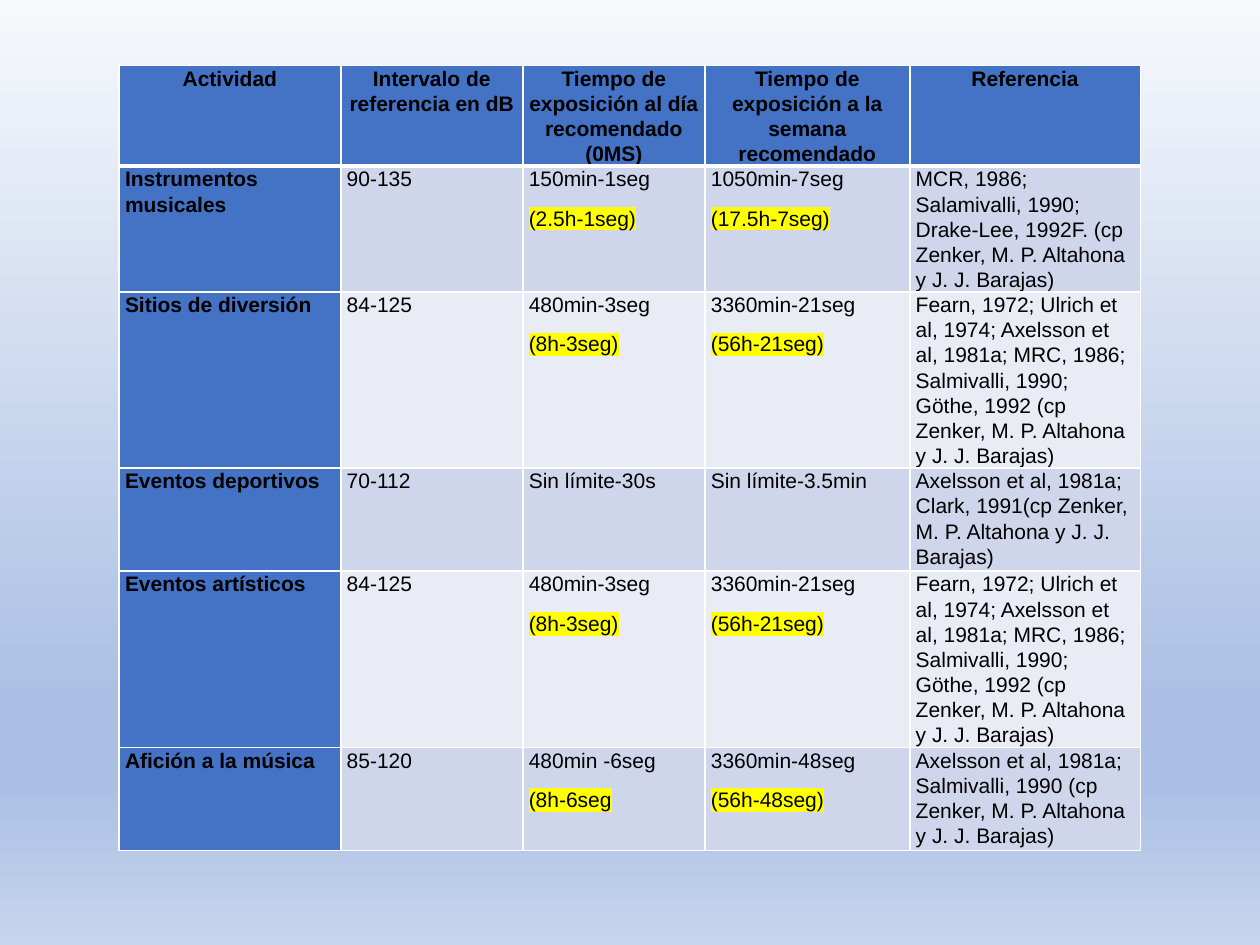
import pptx
import pptx.dml.color
import pptx.enum.text
import pptx.oxml
import pptx.oxml.ns
import pptx.util
from lxml import etree
from pptx.util import Cm, Pt

# Content: each cell is a list of paragraphs; those opening with "(" are highlighted
VENUE_SOURCES = (
    "Fearn, 1972; Ulrich et al, 1974; Axelsson et al, 1981a; MRC, 1986; "
    "Salmivalli, 1990; Göthe, 1992 (cp Zenker, M. P. Altahona y J. J. Barajas)"
)
HEADERS = [
    "Actividad",
    "Intervalo de referencia en dB",
    "Tiempo de exposición al día recomendado (0MS)",
    "Tiempo de exposición a la semana recomendado",
    "Referencia",
]
ACTIVITIES = [
    ["Instrumentos musicales", "90-135",
     ("150min-1seg", "(2.5h-1seg)"), ("1050min-7seg", "(17.5h-7seg)"),
     "MCR, 1986; Salamivalli, 1990; Drake-Lee, 1992F. "
     "(cp Zenker, M. P. Altahona y J. J. Barajas)"],
    ["Sitios de diversión", "84-125",
     ("480min-3seg", "(8h-3seg)"), ("3360min-21seg", "(56h-21seg)"),
     VENUE_SOURCES],
    ["Eventos deportivos", "70-112", "Sin límite-30s", "Sin límite-3.5min",
     "Axelsson et al, 1981a; Clark, 1991"
     "(cp Zenker, M. P. Altahona y J. J. Barajas)"],
    ["Eventos artísticos", "84-125",
     ("480min-3seg", "(8h-3seg)"), ("3360min-21seg", "(56h-21seg)"),
     VENUE_SOURCES],
    ["Afición a la música", "85-120",
     ("480min -6seg", "(8h-6seg"), ("3360min-48seg", "(56h-48seg)"),
     "Axelsson et al, 1981a; Salmivalli, 1990 "
     "(cp Zenker, M. P. Altahona y J. J. Barajas)"],
]

# Style
COLORS = {
    "header": "4472C4", "odd": "CFD5EA", "even": "E9EBF5",
    "text": "000000", "border": "FFFFFF", "highlight": "FFFF00",
}
BACKGROUND_STOPS = [(0, "F6F8FC"), (74, "ABC0E4"), (83, "ABC0E4"), (100, "C7D5ED")]
COLUMN_WIDTHS = [4.47, 3.67, 3.67, 4.13, 4.65]
ROW_HEIGHTS = [1.3, 2.49, 3.33, 2.08, 3.33, 2.08]
LEFT, TOP = 2.4, 1.32


def add_color(parent, tag, color):
    holder = etree.SubElement(parent, pptx.oxml.ns.qn(tag))
    etree.SubElement(holder, pptx.oxml.ns.qn("a:srgbClr"), val=color)
    return holder


def paint_background(page):
    fill = page.background.fill
    fill.gradient()
    fill.gradient_angle = 270
    stops = page.background._cSld.find(".//" + pptx.oxml.ns.qn("a:gsLst"))
    for stop in list(stops):
        stops.remove(stop)
    for percent, color in BACKGROUND_STOPS:
        add_color(stops, "a:gs", color).set("pos", str(percent * 1000))


def add_borders(cell, row):
    widths = {"L": 1, "R": 1, "T": 3 if row == 1 else 1, "B": 3 if row == 0 else 1}
    properties = cell._tc.get_or_add_tcPr()
    for side, width in widths.items():
        line = etree.SubElement(
            properties, pptx.oxml.ns.qn("a:ln" + side), w=str(Pt(width)))
        add_color(line, "a:solidFill", COLORS["border"])


def add_text(para, text, bold, centered):
    para.line_spacing = 1.07
    para.space_after = Pt(8)
    if centered:
        para.alignment = pptx.enum.text.PP_ALIGN.CENTER
    span = para.add_run()
    span.text = text
    span.font.size = Pt(12)
    span.font.bold = bold
    span.font.color.rgb = pptx.dml.color.RGBColor.from_string(COLORS["text"])
    span.font.name = "Arial"
    if text.startswith("("):
        properties = span.font._element
        mark = add_color(properties, "a:highlight", COLORS["highlight"])
        properties.find(pptx.oxml.ns.qn("a:latin")).addprevious(mark)


def fill_cell(cell, content, row, column):
    is_heading = row == 0 or column == 0
    cell.margin_left = cell.margin_right = Cm(0.12)
    cell.margin_top = cell.margin_bottom = Cm(0)
    add_borders(cell, row)
    band = "header" if is_heading else ("odd" if row % 2 else "even")
    cell.fill.solid()
    cell.fill.fore_color.rgb = pptx.dml.color.RGBColor.from_string(COLORS[band])
    frame = cell.text_frame
    lines = [content] if isinstance(content, str) else content
    for index, text in enumerate(lines):
        para = frame.add_paragraph() if index else frame.paragraphs[0]
        add_text(para, text, is_heading, row == 0)


def main():
    deck = pptx.Presentation()
    deck.slide_width, deck.slide_height = Cm(25.4), Cm(19.05)
    page = deck.slides.add_slide(deck.slide_layouts[6])
    paint_background(page)

    # Exposure table
    rows = [HEADERS] + ACTIVITIES
    table = page.shapes.add_table(
        len(rows), len(HEADERS), Cm(LEFT), Cm(TOP),
        Cm(sum(COLUMN_WIDTHS)), Cm(sum(ROW_HEIGHTS))).table
    table.first_col = True
    for column, width in zip(table.columns, COLUMN_WIDTHS):
        column.width = Cm(width)
    for row, height in zip(table.rows, ROW_HEIGHTS):
        row.height = Cm(height)
    for row, contents in enumerate(rows):
        for column, content in enumerate(contents):
            fill_cell(table.cell(row, column), content, row, column)

    deck.save("out.pptx")


if __name__ == "__main__":
    main()
